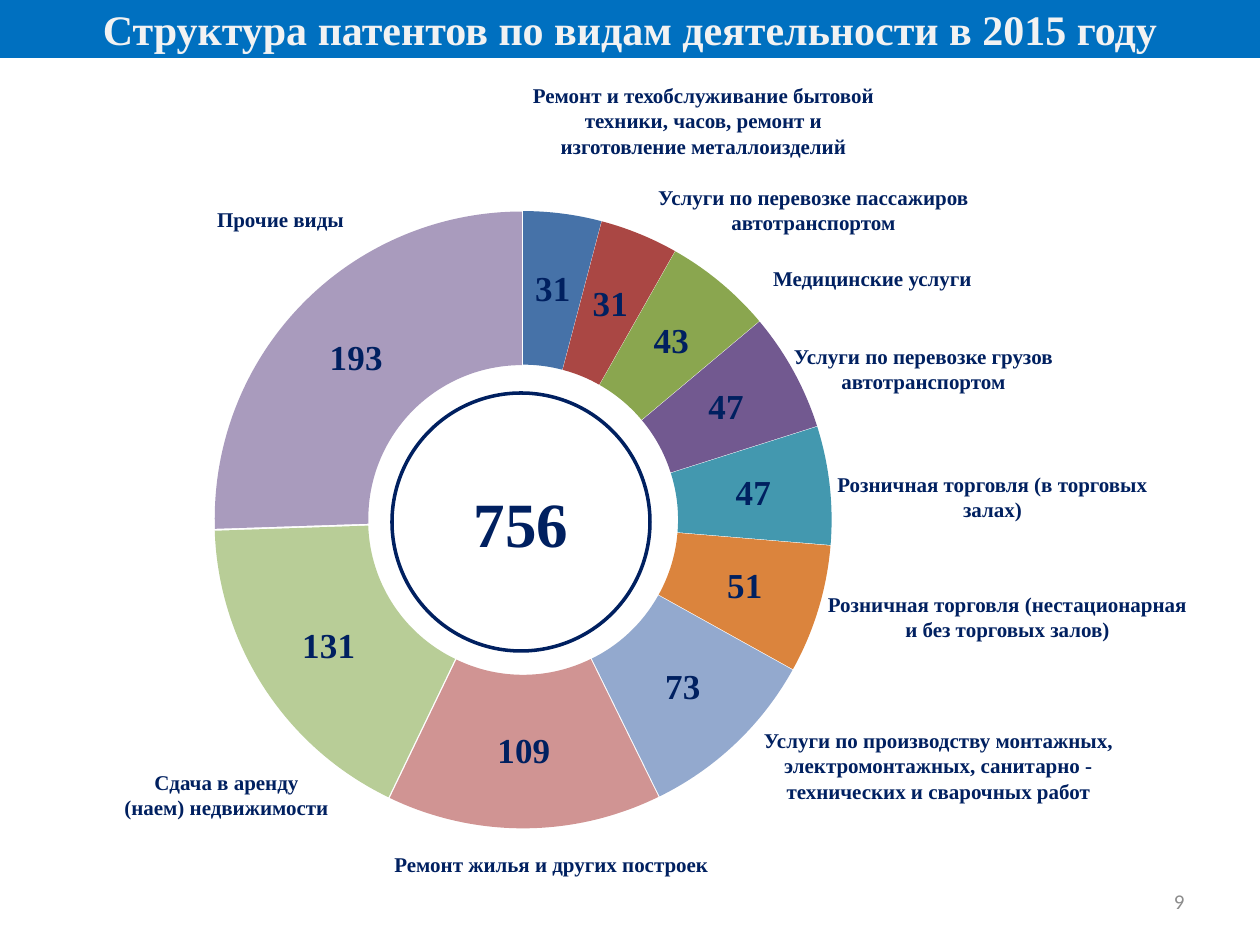
import lxml.etree
import pptx
import pptx.chart.data
import pptx.dml.color
import pptx.enum.chart
import pptx.enum.shapes
import pptx.enum.text
import pptx.oxml.ns
import pptx.util

PX = 914400 / 126
COLORS = {
    "banner": "0070C0", "banner_text": "F2F2F2", "navy": "002060",
    "white": "FFFFFF", "page": "8C8C8C", "chart_text": "000000",
    "home_repair": "D09493", "appliances": "4672A8", "passengers": "AA4744",
    "medicine": "8AA64F", "freight": "725990", "halls": "4398AF",
    "kiosks": "DB843D", "installation": "93A9CE", "rent": "B8CD97",
    "other": "A99BBD",
}
ACTIVITIES = [
    ("appliances", 31, (386, -69, 367, 89),
     "Ремонт и техобслуживание бытовой техники, часов, ремонт и изготовление металлоизделий"),
    ("passengers", 31, (496, 20, 367, 89), "Услуги по перевозке пассажиров автотранспортом"),
    ("medicine", 43, (555, 89, 367, 89), "Медицинские услуги"),
    ("freight", 47, (606, 179, 367, 89), "Услуги по перевозке грузов автотранспортом"),
    ("halls", 47, (675, 307, 367, 89), "Розничная торговля (в торговых залах)"),
    ("kiosks", 51, (675, 427, 397, 89), "Розничная торговля (нестационарная и без торговых залов)"),
    ("installation", 73, (606, 576, 397, 89),
     "Услуги по производству монтажных, электромонтажных, санитарно - технических и сварочных работ"),
    ("home_repair", 109, (219, 675, 397, 89), "Ремонт жилья и других построек"),
    ("rent", 131, (-24, 605, 233, 89), "Сдача в аренду (наем) недвижимости"),
    ("other", 193, (30, 30, 233, 89), "Прочие виды"),
]
PLOT_LAYOUT = {
    "layoutTarget": "inner", "xMode": "edge", "yMode": "edge",
    "x": 0.1, "y": 0.09, "w": 0.78, "h": 0.84,
}


def emu(*lengths):
    return [pptx.util.Emu(round(length * PX)) for length in lengths]


def rgb(name):
    return pptx.dml.color.RGBColor.from_string(COLORS[name])


def set_fill(target, color):
    target.fill.solid()
    target.fill.fore_color.rgb = rgb(color)


def set_font(font, size, color, bold=True, name="Times New Roman"):
    values = {"size": pptx.util.Pt(size), "bold": bold, "name": name}
    for attribute, value in values.items():
        setattr(font, attribute, value)
    font.color.rgb = rgb(color)


def write_text(shape, text, align="CENTER", **font_format):
    frame = shape.text_frame
    values = {"word_wrap": True, "vertical_anchor": pptx.enum.text.MSO_ANCHOR.MIDDLE}
    for attribute, value in values.items():
        setattr(frame, attribute, value)
    paragraph = frame.paragraphs[0]
    paragraph.alignment = getattr(pptx.enum.text.PP_ALIGN, align)
    run = paragraph.add_run()
    run.text = text
    set_font(run.font, **font_format)


def add_text(slide, box, text, **text_format):
    write_text(slide.shapes.add_textbox(*emu(*box)), text, **text_format)


def add_panel(slide, kind, box, fill):
    shape = slide.shapes.add_shape(kind, *emu(*box))
    shape.shadow.inherit = False
    set_fill(shape, fill)
    return shape


def add_banner(slide, box):
    banner = add_panel(slide, pptx.enum.shapes.MSO_SHAPE.RECTANGLE, box, "banner")
    banner.line.fill.background()
    write_text(banner, "Структура патентов по видам деятельности в 2015 году",
               size=24, color="banner_text")


def set_plot_layout(chart):
    qn = pptx.oxml.ns.qn
    plot_area = chart.plots[0]._element.getparent()
    layout = plot_area.find(qn("c:layout"))
    if layout is None:
        layout = lxml.etree.Element(qn("c:layout"))
        plot_area.insert(0, layout)
    manual = lxml.etree.SubElement(layout, qn("c:manualLayout"))
    for tag, value in PLOT_LAYOUT.items():
        lxml.etree.SubElement(manual, qn("c:" + tag)).set("val", str(value))


def set_explosion(series, percent):
    qn = pptx.oxml.ns.qn
    explosion = lxml.etree.Element(qn("c:explosion"))
    explosion.set("val", str(percent))
    series._element.find(qn("c:tx")).addnext(explosion)


def add_doughnut(slide, box):
    data = pptx.chart.data.CategoryChartData(number_format="#,##0")
    data.categories = [str(number) for number in range(1, len(ACTIVITIES) + 1)]
    data.add_series("Series 1", [value for _, value, _, _ in ACTIVITIES])
    chart = slide.shapes.add_chart(
        pptx.enum.chart.XL_CHART_TYPE.DOUGHNUT, *emu(*box), data).chart
    for attribute in ("has_legend", "has_title"):
        setattr(chart, attribute, False)
    set_font(chart.font, 10, "chart_text", bold=False, name="Calibri")
    set_plot_layout(chart)

    series = chart.plots[0].series[0]
    set_explosion(series, 1)
    for index, (color, *_) in enumerate(ACTIVITIES):
        set_fill(series.points[index].format, color)
    labels = series.data_labels
    values = {"show_value": True, "show_percentage": False,
              "number_format": "#,##0", "number_format_is_linked": False}
    for attribute, value in values.items():
        setattr(labels, attribute, value)
    set_font(labels.font, 20, "navy")


def add_total(slide, box):
    circle = add_panel(slide, pptx.enum.shapes.MSO_SHAPE.OVAL, box, "white")
    circle.line.color.rgb = rgb("navy")
    circle.line.width = pptx.util.Pt(2)
    write_text(circle, "756", size=36, color="navy")


def add_patent_structure(slide, box):
    left, top, _, _ = box
    add_doughnut(slide, box)
    add_total(slide, (left + 258, top + 248, 258, 258))
    for _, _, (x, y, width, height), text in ACTIVITIES:
        add_text(slide, (left + x, top + y, width, height), text, size=12, color="navy")


def main():
    presentation = pptx.Presentation()
    presentation.slide_width, presentation.slide_height = emu(1260, 945)
    slide = presentation.slides.add_slide(presentation.slide_layouts[6])
    add_patent_structure(slide, (134, 145, 794, 735))
    add_banner(slide, (0, 0, 1260, 58))
    add_text(slide, (903, 876, 294, 50), "9", align="RIGHT",
             size=12, color="page", bold=False, name="Calibri")
    presentation.save("out.pptx")


if __name__ == "__main__":
    main()
